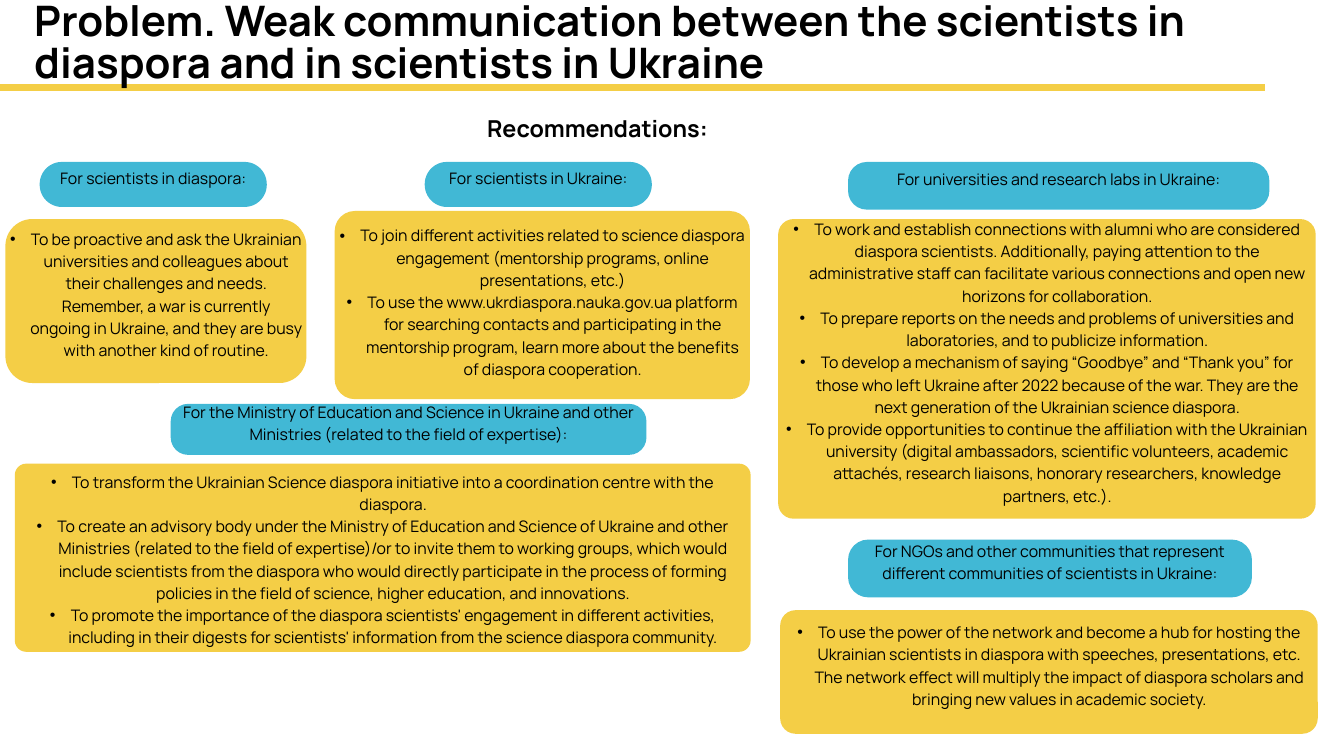
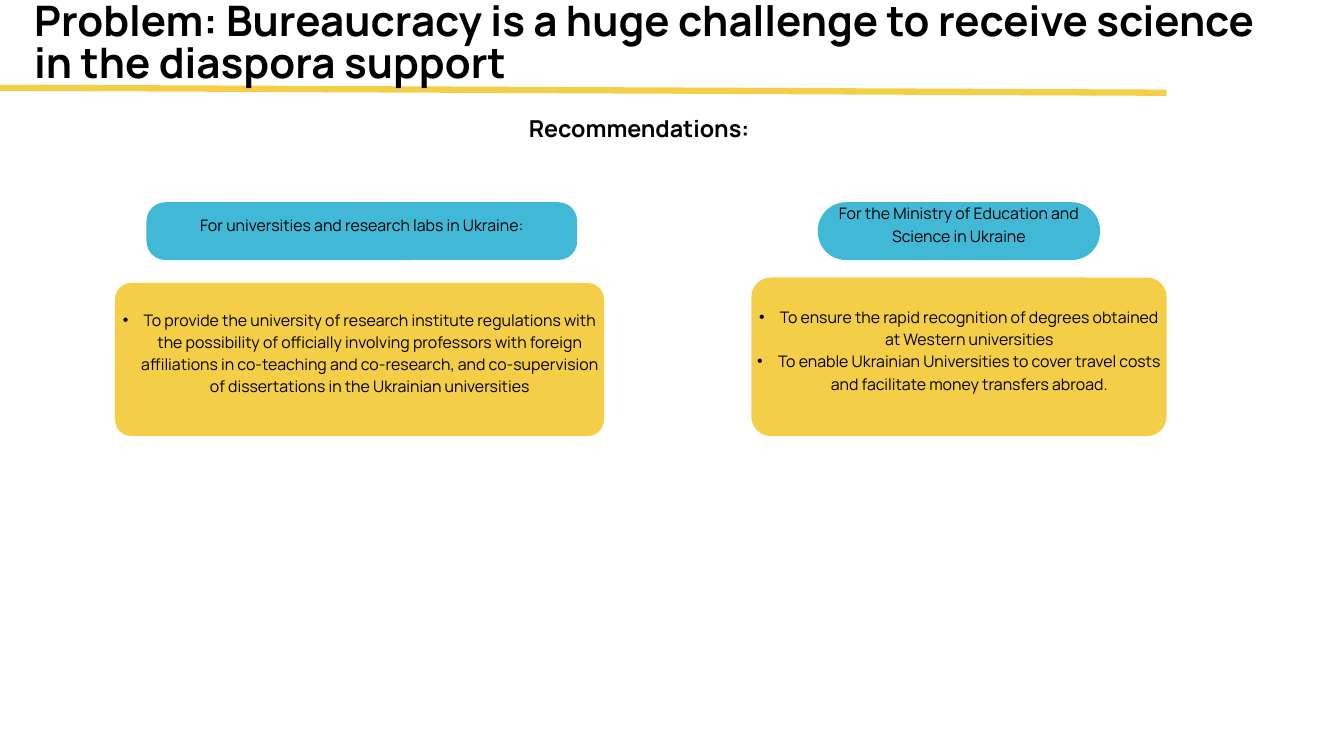
from dataclasses import dataclass

from lxml import etree
from pptx import Presentation
from pptx import util as u
from pptx.dml.color import RGBColor
from pptx.enum import shapes, text
from pptx.oxml import ns
from pptx.slide import Slide
from pptx.text.text import TextFrame, _Paragraph

Inches, Pt = u.Inches, u.Pt


@dataclass(frozen=True)
class Theme:
    font: str = "Manrope"
    ink: RGBColor = RGBColor(0x00, 0x00, 0x00)
    yellow: RGBColor = RGBColor(0xF4, 0xCE, 0x46)
    blue: RGBColor = RGBColor(0x41, 0xB8, 0xD5)
    title_size: float = 45
    title_leading: float = 45
    subtitle_size: float = 25
    subtitle_leading: float = 35
    body_size: float = 17
    body_leading: float = 23.8
    rule_width: float = 6.75


THEME = Theme()
RULE_START = (-1.22, 1.3)
TEXT_RISE = 0.24  # the text area starts this far above its panel
TEXT_INSET = 0.06
BULLET_INDENT = 0.31


@dataclass(frozen=True)
class Panel:
    """A rounded panel; text_drop is how far its text area reaches below it."""
    left: float
    top: float
    width: float
    height: float
    radius: float
    lines: tuple[str, ...]
    text_rise: float = TEXT_RISE
    text_drop: float = 0


class Heading(Panel):
    """A blue label naming an audience."""


class Advice(Panel):
    """A yellow panel of bulleted recommendations."""


@dataclass(frozen=True)
class Page:
    title: str
    rule_end: tuple[float, float]
    subtitle_left: float
    panels: tuple[Panel, ...]


PAGES = (
    Page(
        "Problem. Weak communication between the scientists in diaspora and in scientists in Ukraine",
        (18.83, 1.3), 4.64,
        (
            Heading(0.59, 2.41, 3.38, 0.67, 0.33, ("For scientists in diaspora:",)),
            Heading(6.32, 2.41, 3.38, 0.67, 0.33, ("For scientists in Ukraine:",)),
            Heading(12.62, 2.41, 6.27, 0.71, 0.28,
                    ("For universities and research labs in Ukraine:",)),
            Advice(0.08, 3.26, 4.48, 2.44, 0.4, (
                "To be proactive and ask the Ukrainian universities and colleagues about their "
                "challenges and needs. Remember, a war is currently ongoing in Ukraine, and they "
                "are busy with another kind of routine.",
            )),
            Advice(4.98, 3.14, 6.18, 2.8, 0.3, (
                "To join different activities related to science diaspora engagement "
                "(mentorship programs, online presentations, etc.)",
                "To use the www.ukrdiaspora.nauka.gov.ua platform for searching contacts and "
                "participating in the mentorship program, learn more about the benefits of "
                "diaspora cooperation.",
            ), text_rise=0.2, text_drop=0.07),
            Advice(11.58, 3.26, 8, 4.46, 0.23, (
                "To work and establish connections with alumni who are considered diaspora "
                "scientists. Additionally, paying attention to the administrative staff can "
                "facilitate various connections and open new horizons for collaboration.",
                "To prepare reports on the needs and problems of universities and laboratories, "
                "and to publicize information.",
                "To develop a mechanism of saying “Goodbye” and “Thank you” for those who left "
                "Ukraine after 2022 because of the war. They are the next generation of the "
                "Ukrainian science diaspora.",
                "To provide opportunities to continue the affiliation with the Ukrainian "
                "university (digital ambassadors, scientific volunteers, academic attachés, "
                "research liaisons, honorary researchers, knowledge partners, etc.).",
            )),
            Heading(2.54, 6.01, 7.08, 0.76, 0.26, (
                "For the Ministry of Education and Science in Ukraine and other Ministries "
                "(related to the field of expertise):",
            )),
            Advice(0.22, 6.9, 10.95, 2.8, 0.17, (
                "To transform the Ukrainian Science diaspora initiative into a coordination "
                "centre with the diaspora.",
                "To create an advisory body under the Ministry of Education and Science of "
                "Ukraine and other Ministries (related to the field of expertise)/or to invite "
                "them to working groups, which would include scientists from the diaspora who "
                "would directly participate in the process of forming policies in the field of "
                "science, higher education, and innovations.",
                "To promote the importance of the diaspora scientists' engagement in different "
                "activities, including in their digests for scientists' information from the "
                "science diaspora community.",
            ), text_drop=0.25),
            Heading(12.62, 8.03, 6.01, 0.86, 0.3, (
                "For NGOs and other communities that represent different communities of "
                "scientists in Ukraine:",
            )),
            Advice(11.61, 9.08, 8, 1.84, 0.23, (
                "To use the power of the network and become a hub for hosting the Ukrainian "
                "scientists in diaspora with speeches, presentations, etc. The network effect "
                "will multiply the impact of diaspora scholars and bringing new values in "
                "academic society.",
            )),
        ),
    ),
    Page(
        "Problem: Bureaucracy is a huge challenge to receive science in the diaspora support",
        (17.36, 1.38), 5.26,
        (
            Heading(2.18, 3.01, 6.41, 0.86, 0.28,
                    ("For universities and research labs in Ukraine:",)),
            Heading(12.17, 3.01, 4.2, 0.86, 0.42,
                    ("For the Ministry of Education and Science in Ukraine",)),
            Advice(1.71, 4.21, 7.28, 2.28, 0.25, (
                "To provide the university of research institute regulations with the "
                "possibility of officially involving professors with foreign affiliations in "
                "co-teaching and co-research, and co-supervision of dissertations in the "
                "Ukrainian universities",
            )),
            Advice(11.18, 4.13, 6.18, 2.36, 0.29, (
                "To ensure the rapid recognition of degrees obtained at Western universities",
                "To enable Ukrainian Universities to cover travel costs and facilitate money "
                "transfers abroad.",
            )),
        ),
    ),
)


def set_insets(frame: TextFrame, inset: float) -> None:
    frame.margin_left = frame.margin_right = Inches(inset)
    frame.margin_top = frame.margin_bottom = Inches(inset)


def add_bullet(paragraph: _Paragraph) -> None:
    properties = paragraph._p.get_or_add_pPr()
    properties.set("marL", str(Inches(BULLET_INDENT)))
    properties.set("indent", str(-Inches(BULLET_INDENT)))
    etree.SubElement(properties, ns.qn("a:buFont"), typeface="Arial")
    etree.SubElement(properties, ns.qn("a:buChar"), char="•")


def style_paragraph(paragraph: _Paragraph, size: float, leading: float,
                    bold: bool = False, centred: bool = True) -> None:
    paragraph.alignment = text.PP_ALIGN.CENTER if centred else text.PP_ALIGN.LEFT
    paragraph.line_spacing = Pt(leading)
    font = paragraph.font
    font.name, font.size, font.bold = THEME.font, Pt(size), bold
    font.color.rgb = THEME.ink


def add_headline(slide: Slide, wording: str, box: tuple[float, float, float, float],
                 size: float, leading: float, centred: bool) -> None:
    frame = slide.shapes.add_textbox(*map(Inches, box)).text_frame
    frame.word_wrap = True
    frame.auto_size = text.MSO_AUTO_SIZE.SHAPE_TO_FIT_TEXT
    set_insets(frame, 0)
    frame.text = wording
    style_paragraph(frame.paragraphs[0], size, leading, bold=True, centred=centred)


def add_rule(slide: Slide, end: tuple[float, float]) -> None:
    rule = slide.shapes.add_connector(
        shapes.MSO_CONNECTOR.STRAIGHT, *map(Inches, RULE_START + end))
    rule.line.color.rgb = THEME.yellow
    rule.line.width = Pt(THEME.rule_width)
    etree.SubElement(rule._element.spPr, ns.qn("a:effectLst"))


def add_panel(slide: Slide, panel: Panel) -> None:
    bulleted = isinstance(panel, Advice)
    group = slide.shapes.add_group_shape()
    shape = group.shapes.add_shape(
        shapes.MSO_SHAPE.ROUNDED_RECTANGLE, Inches(panel.left), Inches(panel.top),
        Inches(panel.width), Inches(panel.height))
    shape.adjustments[0] = panel.radius / min(panel.width, panel.height)
    shape.shadow.inherit = False
    shape.fill.solid()
    shape.fill.fore_color.rgb = THEME.yellow if bulleted else THEME.blue
    shape.line.fill.background()

    frame = group.shapes.add_textbox(
        Inches(panel.left), Inches(panel.top - panel.text_rise), Inches(panel.width),
        Inches(panel.height + panel.text_rise + panel.text_drop)).text_frame
    frame.word_wrap = True
    frame.vertical_anchor = text.MSO_ANCHOR.MIDDLE
    set_insets(frame, TEXT_INSET)
    frame.text = "\n".join(panel.lines)
    for paragraph in frame.paragraphs:
        if bulleted:
            add_bullet(paragraph)
        style_paragraph(paragraph, THEME.body_size, THEME.body_leading)


def add_page(presentation, page: Page) -> None:
    slide = presentation.slides.add_slide(presentation.slide_layouts[6])
    add_rule(slide, page.rule_end)
    add_headline(slide, page.title, (0.51, 0.04, 18.37, 1.33),
                 THEME.title_size, THEME.title_leading, centred=False)
    add_headline(slide, "Recommendations:", (page.subtitle_left, 1.63, 8.5, 0.48),
                 THEME.subtitle_size, THEME.subtitle_leading, centred=True)
    for panel in page.panels:
        add_panel(slide, panel)


def main() -> None:
    presentation = Presentation()
    presentation.slide_width, presentation.slide_height = Inches(20), Inches(11.25)
    for page in PAGES:
        add_page(presentation, page)
    presentation.save("out.pptx")


if __name__ == "__main__":
    main()
